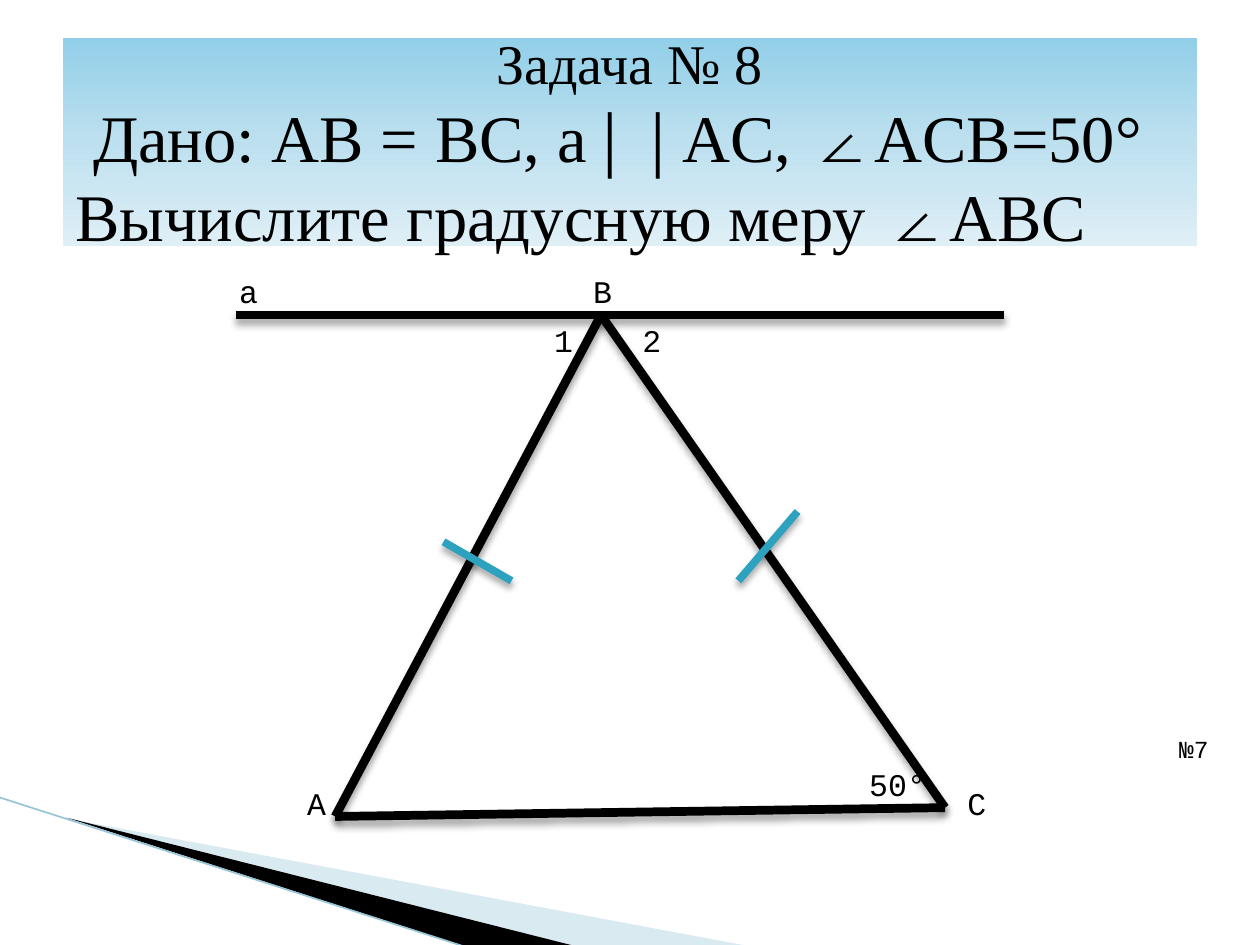
from copy import deepcopy
from lxml.etree import SubElement
from pptx import Presentation
from pptx.dml.color import RGBColor
from pptx.enum.shapes import MSO_CONNECTOR, MSO_SHAPE
from pptx.enum.text import MSO_ANCHOR, PP_ALIGN
from pptx.oxml.ns import qn
from pptx.util import Inches, Pt

COLORS = {
    "black": "000000",
    "teal": "2DA2BF",
    "edge": "97C5D8",
    "wedge": "A0CBDC",
    "top": "92CFE8",
    "middle": "BDE0EF",
    "bottom": "DFEFF6",
}


def write(p, text, size=18, font="Courier New", align=PP_ALIGN.LEFT, indent=0, margin=0):
    p.text = text
    p.alignment = align
    pPr = p._p.get_or_add_pPr()
    pPr.set("marL", str(Inches(margin)))
    pPr.set("indent", str(Inches(indent)))
    for r in p.runs:
        r.font.size = Pt(size)
        r.font.name = font
        r.font.color.rgb = RGBColor.from_string(COLORS["black"])


def add_line(s, start, end, color="black", width=5, shadow=True):
    sp = s.shapes.add_connector(
        MSO_CONNECTOR.STRAIGHT, *[Inches(v) for v in (*start, *end)])
    sp.line.color.rgb = RGBColor.from_string(COLORS[color])
    sp.line.width = Pt(width)
    effects = SubElement(sp._element.spPr, qn("a:effectLst"))
    if shadow:
        outer = SubElement(effects, qn("a:outerShdw"), blurRad=str(Pt(4)),
                           dist=str(Pt(3)), dir="5400000", rotWithShape="0")
        clr = SubElement(outer, qn("a:srgbClr"), val=COLORS["black"])
        SubElement(clr, qn("a:alpha"), val="35000")


prs = Presentation()
prs.slide_width, prs.slide_height = Inches(10), Inches(7.5)
s = prs.slides.add_slide(prs.slide_layouts[6])

wedges = [
    ("wedge", 40, [(0.55, 6.5), (5.95, 7.51), (4.56, 7.51)]),
    ("black", 100, [(0.53, 6.49), (4.57, 7.51), (3.72, 7.52)]),
]
for color, alpha, points in wedges:
    corners = [(Inches(x), Inches(y)) for x, y in points]
    builder = s.shapes.build_freeform(*corners[0])
    builder.add_line_segments(corners[1:], close=True)
    sp = builder.convert_to_shape()
    sp.shadow.inherit = False
    sp.line.fill.background()
    sp.fill.solid()
    sp.fill.fore_color.rgb = RGBColor.from_string(COLORS[color])
    clr = sp._element.spPr.find(".//" + qn("a:srgbClr"))
    SubElement(clr, qn("a:alpha"), val=str(alpha * 1000))
add_line(s, (0, 6.33), (3.71, 7.52), "edge", 0.95, shadow=False)

sp = s.shapes.add_shape(
    MSO_SHAPE.RECTANGLE, Inches(0.5), Inches(0.3), Inches(9), Inches(1.65))
sp.shadow.inherit = False
sp.line.fill.background()
sp.fill.gradient()
sp.fill.gradient_angle = 270
stops = sp._element.spPr.find(".//" + qn("a:gsLst"))
stops.insert(1, deepcopy(stops[0]))
for stop, color, pos in zip(sp.fill.gradient_stops, ("top", "middle", "bottom"), (0, 0.5, 1)):
    stop.color.rgb = RGBColor.from_string(COLORS[color])
    stop.position = pos
tf = sp.text_frame
tf.word_wrap = True
tf.vertical_anchor = MSO_ANCHOR.MIDDLE
write(tf.paragraphs[0], "Задача № 8", size=32, font="Times New Roman", align=PP_ALIGN.CENTER)
write(tf.add_paragraph(), "Дано: AB = BC, a∣∣AC, ∠ACB=50°\vВычислите градусную меру ∠ABC",
      size=38, font="Times New Roman", indent=0.14)

A, B, C = (2.66, 6.48), (4.77, 2.5), (7.5, 6.41)
for start, end in [(B, A), (B, C), (A, C), ((1.87, 2.5), (7.97, 2.5))]:
    add_line(s, start, end)
for start, end in [((3.52, 4.3), (4.06, 4.61)), ((6.33, 4.06), (5.86, 4.61))]:
    add_line(s, start, end, "teal", 4.33)

labels = [
    ("a", 1.8, 2.11, 0.31),
    ("B", 4.61, 2.11, 0.49),
    ("A", 2.34, 6.17, 0.47),
    ("C", 7.58, 6.17, 0.34),
    ("50°", 6.8, 6.02, 0.78),
    ("1", 4.3, 2.5, 0.25),
    ("2", 5, 2.5, 0.56),
]
for text, x, y, w in labels:
    tf = s.shapes.add_textbox(Inches(x), Inches(y), Inches(w), Inches(0.4)).text_frame
    tf.word_wrap = True
    write(tf.paragraphs[0], text)

tf = s.shapes.add_textbox(Inches(9.14), Inches(5.78), Inches(0.66), Inches(0.49)).text_frame
tf.word_wrap = True
write(tf.paragraphs[0], "№7", size=14, margin=0.4, indent=-0.28)

prs.save("out.pptx")
